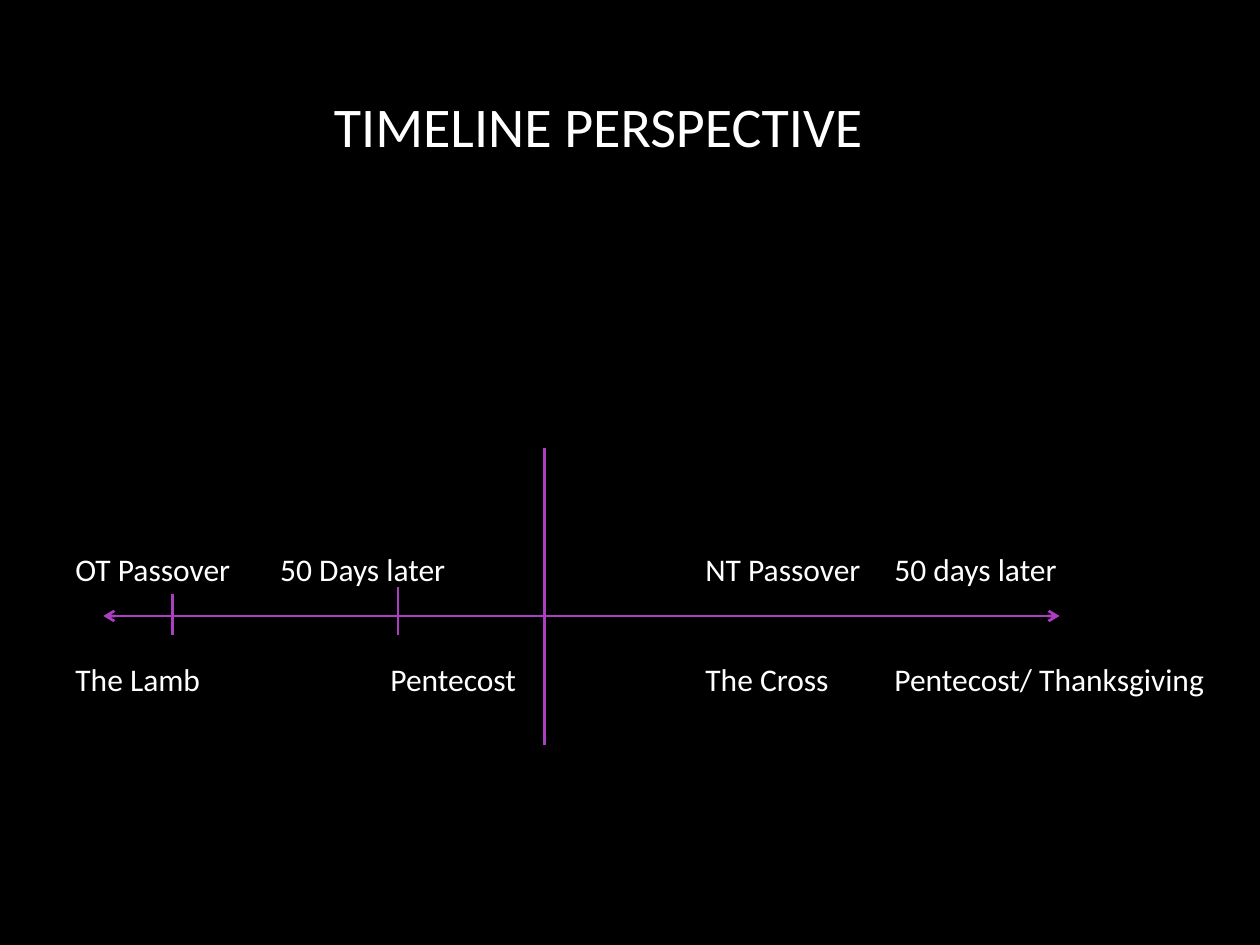
import pptx
import pptx.dml.color
import pptx.enum.shapes
import pptx.enum.text
import pptx.oxml.ns
import pptx.util
from lxml import etree

Pt = pptx.util.Pt
RGB = pptx.dml.color.RGBColor.from_string
qn = pptx.oxml.ns.qn
COLORS = {"background": "000000", "text": "FFFFFF", "line": "AC3EC1"}

deck = pptx.Presentation()
deck.slide_width, deck.slide_height = Pt(720), Pt(540)
slide = deck.slides.add_slide(deck.slide_layouts[6])
slide.background.fill.solid()
slide.background.fill.fore_color.rgb = RGB(COLORS["background"])


def add_frame(left, top, width, height, frame_format):
    frame = slide.shapes.add_textbox(Pt(left), Pt(top), Pt(width), Pt(height)).text_frame
    for name, value in frame_format.items():
        setattr(frame, name, value)
    return frame


def write(paragraph, text, size):
    paragraph.text = text
    for name, value in {"name": "Calibri", "size": Pt(size)}.items():
        setattr(paragraph.font, name, value)
    paragraph.font.color.rgb = RGB(COLORS["text"])


# Title
title = add_frame(36, 49, 612, 66, {"word_wrap": True})
title.paragraphs[0].alignment = pptx.enum.text.PP_ALIGN.CENTER
write(title.paragraphs[0], "TIMELINE PERSPECTIVE", 32)

# Events above the axis and their meanings below it, aligned by tab stops
rows = [
    (["OT Passover", "50 Days later", "NT Passover", "50 days later"], [117, 360, 468]),
    (["The Lamb", "Pentecost", "The Cross", "Pentecost/ Thanksgiving"], [180, 360, 468]),
]
events = add_frame(36, 157, 661, 336,
                   {"word_wrap": True, "margin_top": Pt(157.5), "margin_right": 0})
for index, (labels, stops) in enumerate(rows):
    row = events.add_paragraph() if index else events.paragraphs[0]
    row.space_after = Pt(41 if index == 0 else 0)
    tabs = etree.SubElement(row._p.get_or_add_pPr(), qn("a:tabLst"))
    for stop in stops:
        etree.SubElement(tabs, qn("a:tab"), pos=str(int(Pt(stop))), algn="l")
    write(row, "\t".join(labels), 18)

# Axis with arrowheads, event ticks and the divide between the testaments
timeline = [
    (59, 352, 605.5, 352, True),
    (98.6, 339.5, 98.6, 363, False),
    (311, 426, 311, 256, False),
    (227.5, 335.5, 227.5, 363, False),
]
for x1, y1, x2, y2, has_arrows in timeline:
    stroke = slide.shapes.add_connector(
        pptx.enum.shapes.MSO_CONNECTOR.STRAIGHT, Pt(x1), Pt(y1), Pt(x2), Pt(y2))
    stroke.line.color.rgb = RGB(COLORS["line"])
    stroke.line.width = Pt(1.5)
    if has_arrows:
        for end in ("a:headEnd", "a:tailEnd"):
            etree.SubElement(stroke.line._get_or_add_ln(), qn(end), type="arrow")
    etree.SubElement(stroke._element.spPr, qn("a:effectLst"))

deck.save("out.pptx")
